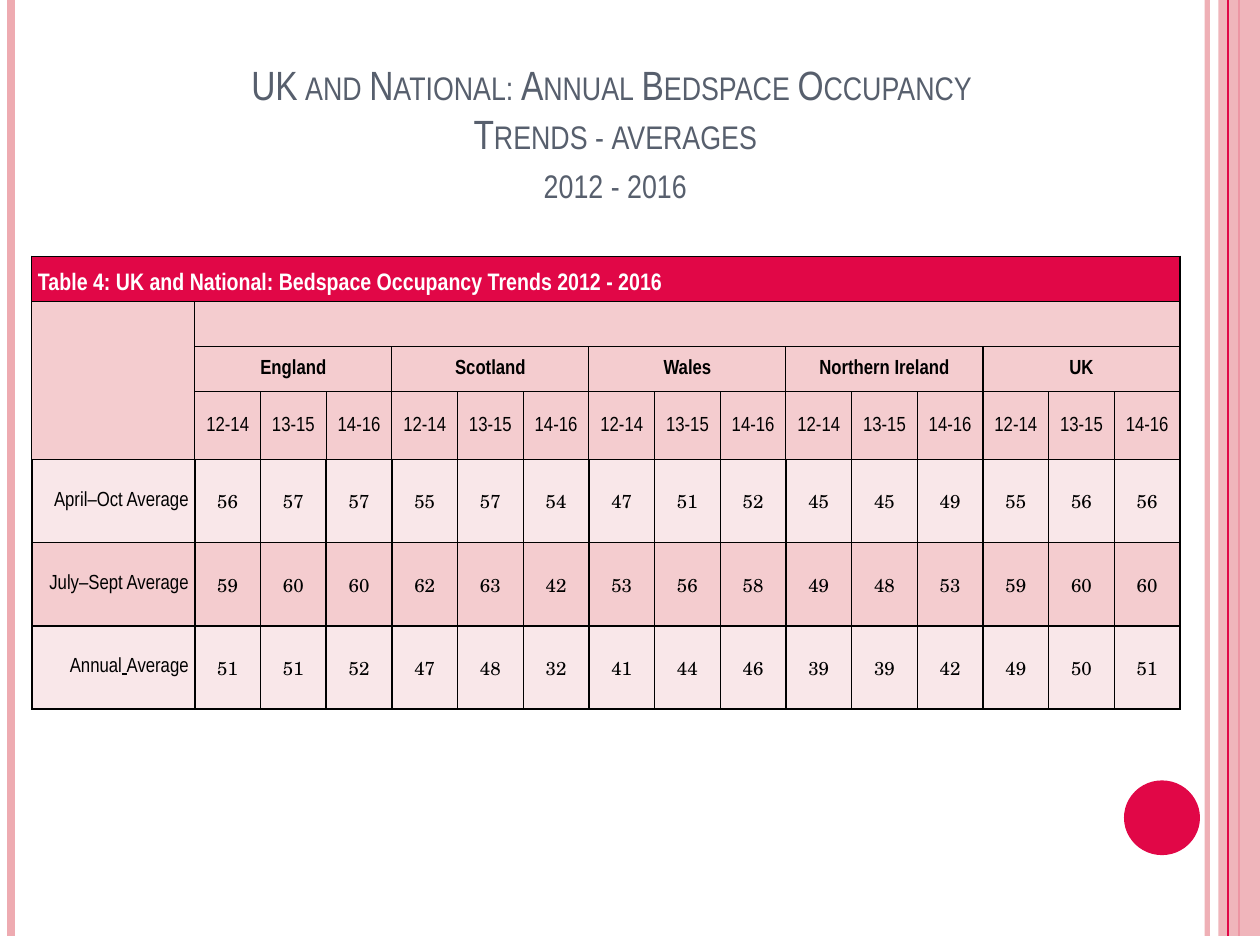
from lxml import etree
from pptx import Presentation, util as u
from pptx.dml.color import RGBColor
from pptx.enum import shapes, text
from pptx.oxml.ns import qn

WIDTH, HEIGHT = 10.28, 7.64
COLORS = {"crimson": "E10747", "rose": "EEABB1", "band": "F4CCCF", "light": "F9E7E9",
          "slate": "575F6D", "white": "FFFFFF", "black": "000000"}
NARROW, SCHOLA = "Arial Narrow", "TeX Gyre Schola"


def write(frame, *paragraphs, size=12, font=NARROW, color="black", bold=False,
          align="CENTER", small_caps=False):
    """Fill a text frame; each paragraph is a list of runs, and a run of a lone space is underlined."""
    for index, runs in enumerate(paragraphs):
        paragraph = frame.paragraphs[0] if index == 0 else frame.add_paragraph()
        paragraph.alignment = getattr(text.PP_ALIGN, align)
        for words in runs:
            run = paragraph.add_run()
            run.text = words
            run.font.size, run.font.name, run.font.bold = u.Pt(size), font, bold
            run.font.underline = words == " "
            run.font.color.rgb = RGBColor.from_string(COLORS[color])
            if small_caps:
                run.font._element.set("cap", "small")


def paint(fill, color, opacity=100):
    fill.solid()
    fill.fore_color.rgb = RGBColor.from_string(COLORS[color])
    if opacity < 100:
        color_node = fill._xPr.find(qn("a:solidFill"))[0]
        etree.SubElement(color_node, qn("a:alpha")).set("val", str(opacity * 1000))


presentation = Presentation()
presentation.slide_width, presentation.slide_height = u.Inches(WIDTH), u.Inches(HEIGHT)
slide = presentation.slides.add_slide(presentation.slide_layouts[5])

# Side stripes, panel and disc, from back to front
decorations = [
    ("stripe", 9.85, 3, "rose", 93),
    ("stripe", 0.09, 4.5, "rose", 100),
    ("stripe", 10.11, 1.5, "crimson", 100),
    ("RECTANGLE", (9.94, 0, WIDTH - 9.94, HEIGHT), 0, "rose", 87),
    ("stripe", 10.02, 0.75, "crimson", 100),
    ("OVAL", (9.17, 6.37, 0.62, 0.61), 0, "crimson", 100),
]
for kind, place, weight, color, opacity in decorations:
    if kind == "stripe":
        stripe = slide.shapes.add_connector(
            shapes.MSO_CONNECTOR.STRAIGHT, u.Inches(place), 0, u.Inches(place), u.Inches(HEIGHT))
        stripe.line.width = u.Pt(weight)
        paint(stripe.line.fill, color, opacity)
        etree.SubElement(stripe._element.spPr, qn("a:effectLst"))
    else:
        shape = slide.shapes.add_shape(getattr(shapes.MSO_SHAPE, kind), *map(u.Inches, place))
        shape.shadow.inherit = False
        shape.line.fill.background()
        paint(shape.fill, color, opacity)

title = slide.shapes.title
title.left, title.top, title.width, title.height = map(u.Inches, (0.49, 0.43, 9.06, 1.26))
title_frame = title.text_frame
title_frame.word_wrap = True
title_frame.auto_size = text.MSO_AUTO_SIZE.NONE
title_frame.vertical_anchor = text.MSO_ANCHOR.BOTTOM
title_frame.margin_top = title_frame.margin_bottom = 0
write(title_frame, ["UK and National: Annual Bedspace Occupancy "], ["Trends - averages"],
      ["2012 - 2016"], size=24, color="slate", small_caps=True)

# Occupancy table
nations = ["England", "Scotland", "Wales", "Northern Ireland", "UK"]
periods = ["12-14", "13-15", "14-16"]
averages = [
    (["April–Oct Average"], [56, 57, 57, 55, 57, 54, 47, 51, 52, 45, 45, 49, 55, 56, 56]),
    (["July–Sept Average"], [59, 60, 60, 62, 63, 42, 53, 56, 58, 49, 48, 53, 59, 60, 60]),
    (["Annual", " ", "Average"], [51, 51, 52, 47, 48, 32, 41, 44, 46, 39, 39, 42, 49, 50, 51]),
]
row_heights = [0.37] * 3 + [0.55] + [0.68] * 3
row_colors = ["crimson", "band", "band", "band", "light", "band", "light"]
column_widths = [1.33] + [8.04 / 15] * 15
table = slide.shapes.add_table(
    len(row_heights), len(column_widths), u.Inches(0.26), u.Inches(2.09),
    u.Inches(sum(column_widths)), u.Inches(sum(row_heights))).table
for row, height in zip(table.rows, row_heights):
    row.height = u.Inches(height)
for column, width in zip(table.columns, column_widths):
    column.width = u.Inches(width)

for row, color in enumerate(row_colors):
    for column in range(len(column_widths)):
        cell = table.cell(row, column)
        roomy = column == 0 or row < 3
        cell.margin_left = cell.margin_right = u.Inches(0.05 if roomy else 0.01)
        cell.margin_top, cell.margin_bottom = u.Inches(0 if roomy else 0.01), 0
        cell.vertical_anchor = text.MSO_ANCHOR.MIDDLE
        properties = cell._tc.get_or_add_tcPr()
        for side in ("lnL", "lnR", "lnT", "lnB"):
            thin = row < 4 or (row == 4 and side == "lnT")
            border = etree.SubElement(properties, qn(f"a:{side}"), w=str(u.Pt(0.75 if thin else 1)))
            border_fill = etree.SubElement(border, qn("a:solidFill"))
            etree.SubElement(border_fill, qn("a:srgbClr"), val=COLORS["black"])
        paint(cell.fill, color)

table.cell(0, 0).merge(table.cell(0, 15))
table.cell(1, 0).merge(table.cell(3, 0))
table.cell(1, 1).merge(table.cell(1, 15))

heading = table.cell(0, 0).text_frame
write(heading, ["Table 4: UK and National: Bedspace Occupancy Trends 2012 - 2016"],
      size=14, color="white", bold=True, align="LEFT")
heading.paragraphs[0].line_spacing = 1.5
heading.paragraphs[0].space_before = heading.paragraphs[0].space_after = u.Pt(2)

for group, nation in enumerate(nations):
    first = 1 + group * len(periods)
    nation_cell = table.cell(2, first)
    nation_cell.merge(table.cell(2, first + len(periods) - 1))
    write(nation_cell.text_frame, [nation], bold=True)
    for offset, period in enumerate(periods):
        write(table.cell(3, first + offset).text_frame, [period])

for row, (label, values) in enumerate(averages, start=4):
    write(table.cell(row, 0).text_frame, label, align="RIGHT")
    for column, value in enumerate(values, start=1):
        write(table.cell(row, column).text_frame, [str(value)], size=11, font=SCHOLA)

presentation.save("out.pptx")
